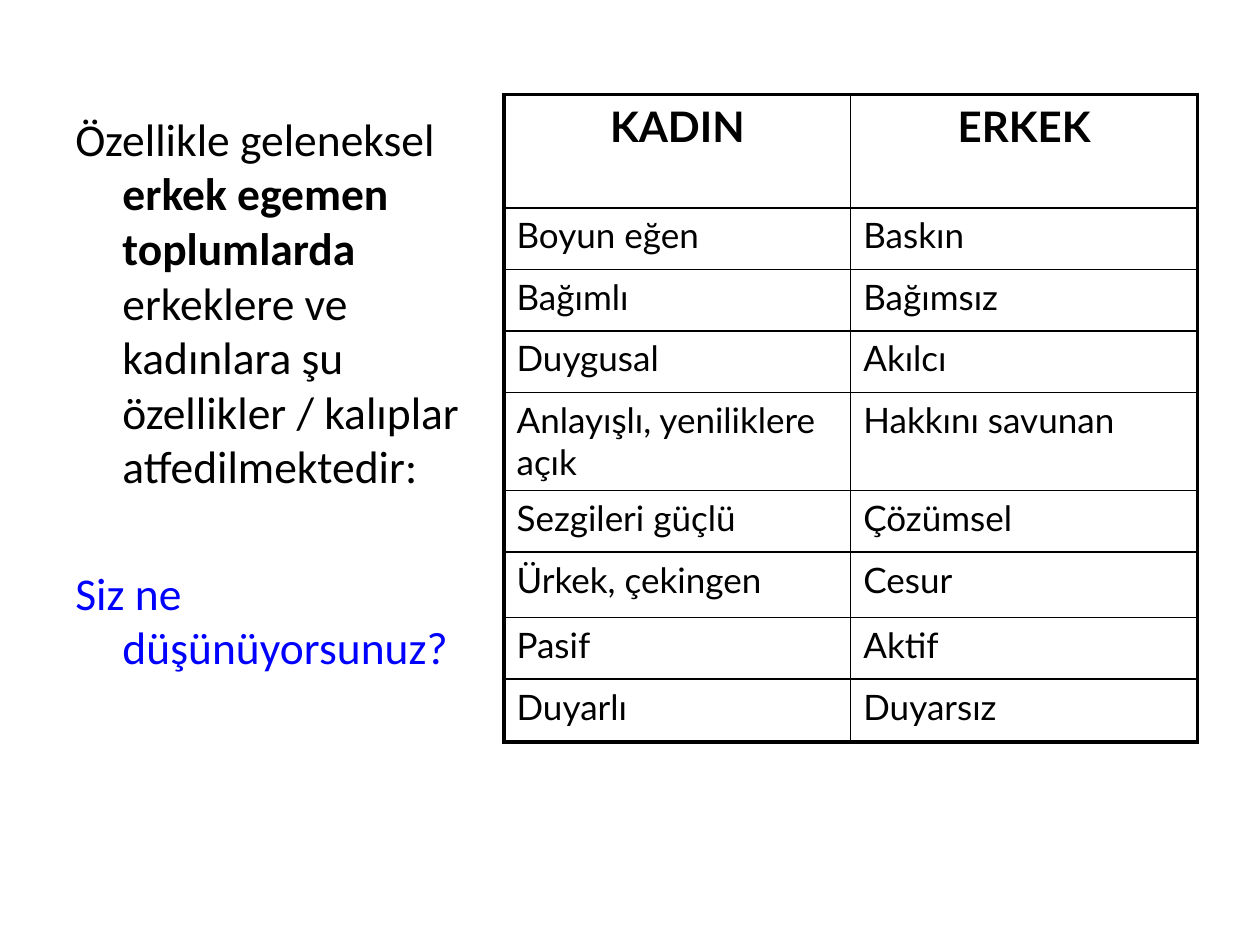
"""Build a slide on the traits that tradition assigns to women and men."""
import pptx
import pptx.dml.color
import pptx.enum.text
import pptx.oxml.ns
import pptx.util
from dataclasses import dataclass
from lxml import etree

Cm = pptx.util.Cm
Pt = pptx.util.Pt


@dataclass(frozen=True)
class Theme:
    ink: str = "000000"
    accent: str = "0000FF"
    prose: str = "Calibri"
    grid: str = "Lato"
    body: int = 26
    head: int = 24
    cell: int = 20
    thin: float = 1
    thick: float = 2.25


theme = Theme()


def style(run, face, size, color, bold=False):
    """Format one run of text."""
    run.font.name = face
    run.font.size = Pt(size)
    run.font.bold = bold
    run.font.color.rgb = pptx.dml.color.RGBColor.from_string(color)


def border(cell, side, width):
    """Draw one solid edge of a table cell."""
    qn = pptx.oxml.ns.qn
    props = cell._tc.get_or_add_tcPr()
    line = etree.SubElement(props, qn("a:ln" + side), w=str(Pt(width)))
    fill = etree.SubElement(line, qn("a:solidFill"))
    etree.SubElement(fill, qn("a:srgbClr"), val=theme.ink)


deck = pptx.Presentation()
deck.slide_width = Cm(25.4)
deck.slide_height = Cm(19.05)
slide = deck.slides.add_slide(deck.slide_layouts[6])

box = slide.shapes.add_textbox(Cm(1.27), Cm(2.11), Cm(8.69), Cm(14.91))
frame = box.text_frame
frame.word_wrap = True
prose = [
    (0, theme.ink, [
        ("Özellikle geleneksel ", False),
        ("erkek egemen toplumlarda", True),
        (" erkeklere ve kadınlara şu özellikler / kalıplar atfedilmektedir:", False),
    ]),
    (41, theme.accent, [("Siz ne düşünüyorsunuz?", False)]),
]
for i, (gap, color, parts) in enumerate(prose):
    para = frame.add_paragraph() if i else frame.paragraphs[0]
    para.space_before = Pt(gap)
    props = para._p.get_or_add_pPr()
    props.set("marL", str(Cm(0.95)))
    props.set("indent", str(-Cm(0.95)))
    for text, bold in parts:
        run = para.add_run()
        run.text = text
        style(run, theme.prose, theme.body, color, bold)

rows = [
    (2.28, "KADIN", "ERKEK"),
    (1.24, "Boyun eğen", "Baskın"),
    (1.24, "Bağımlı", "Bağımsız"),
    (1.24, "Duygusal", "Akılcı"),
    (1.98, "Anlayışlı, yeniliklere açık", "Hakkını savunan"),
    (1.24, "Sezgileri güçlü", "Çözümsel"),
    (1.32, "Ürkek, çekingen", "Cesur"),
    (1.24, "Pasif", "Aktif"),
    (1.27, "Duyarlı", "Duyarsız"),
]
tall = sum(row[0] for row in rows)
table = slide.shapes.add_table(
    len(rows), 2, Cm(10.16), Cm(1.91), Cm(13.98), Cm(tall)
).table
table.first_row = False
table.horz_banding = False
for col in table.columns:
    col.width = Cm(6.99)

for r, (height, *words) in enumerate(rows):
    table.rows[r].height = Cm(height)
    for c, word in enumerate(words):
        cell = table.cell(r, c)
        cell.text_frame.text = word
        para = cell.text_frame.paragraphs[0]
        top = r == 0
        if top:
            para.alignment = pptx.enum.text.PP_ALIGN.CENTER
        size = theme.head if top else theme.cell
        style(para.runs[0], theme.grid, size, theme.ink, top)
        edges = {"L": c == 0, "R": c == 1, "T": top, "B": r == len(rows) - 1}
        for side, outer in edges.items():
            border(cell, side, theme.thick if outer else theme.thin)
        cell.fill.background()

deck.save("out.pptx")
